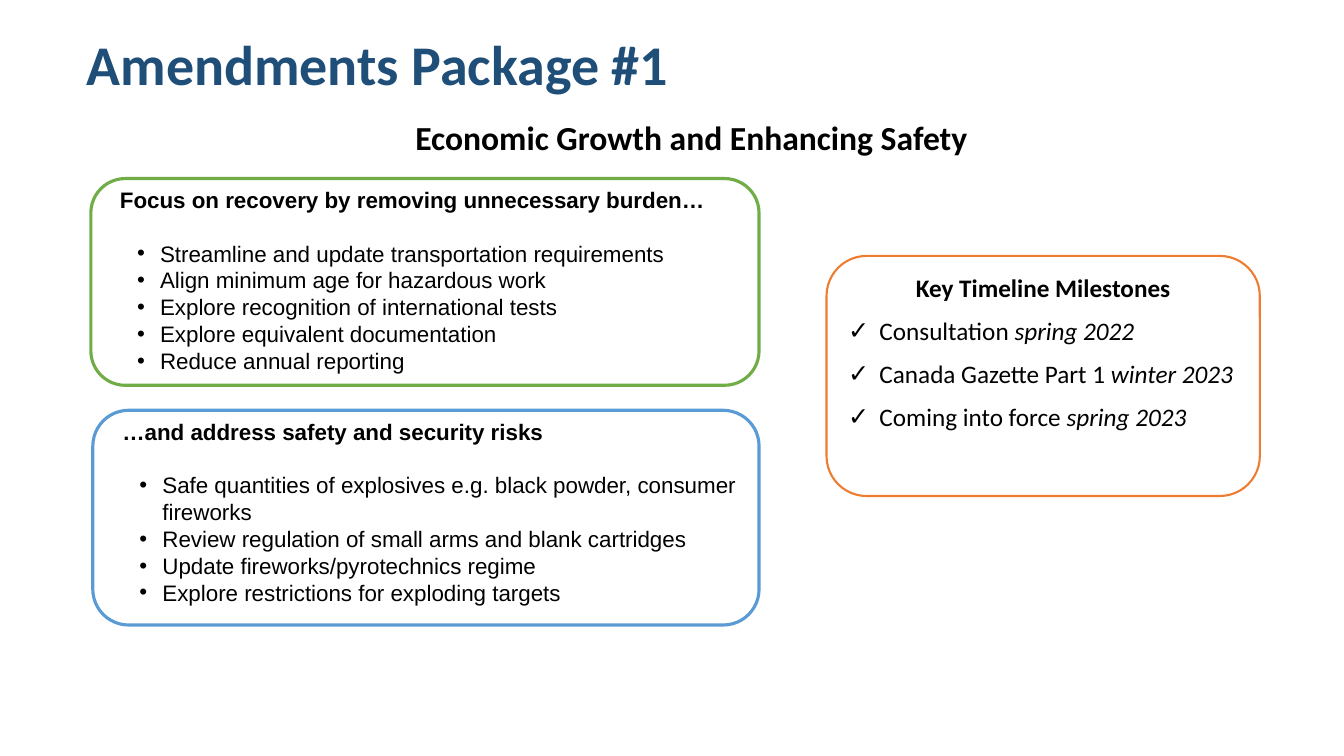
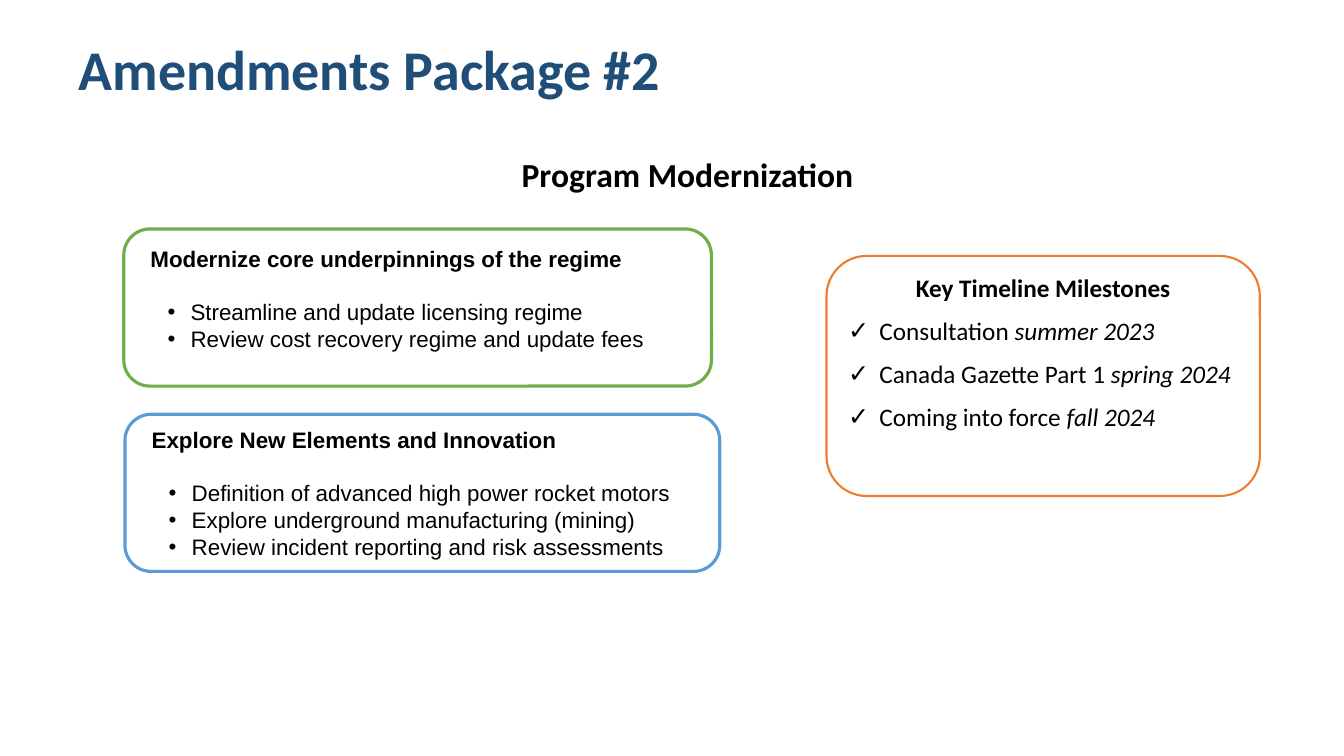
from dataclasses import dataclass

from lxml import etree
from pptx import Presentation
from pptx.dml.color import RGBColor
from pptx.enum import shapes, text
from pptx.oxml import ns
from pptx.util import Cm, Pt

NAVY = RGBColor(0x1F, 0x4E, 0x79)
BLACK = RGBColor(0x00, 0x00, 0x00)
WHITE = RGBColor(0xFF, 0xFF, 0xFF)
GREEN = RGBColor(0x70, 0xAD, 0x47)
BLUE = RGBColor(0x5B, 0x9B, 0xD5)
ORANGE = RGBColor(0xED, 0x7D, 0x31)

HEADING_FONT = "Calibri"
CARD_FONT = "Arial"
CARD_LINE = Pt(19.2)
MILESTONES = ("Consultation ", "Canada Gazette Part 1 ", "Coming into force ")


@dataclass(frozen=True)
class Area:
    """A rectangle on the page, in centimetres."""

    left: float
    top: float
    width: float
    height: float


TIMELINE_AREA = Area(20.83, 6.45, 10.92, 6.05)


@dataclass(frozen=True)
class Card:
    """An outlined card with a heading and bullets."""

    area: Area
    color: RGBColor
    heading: str
    items: tuple[str, ...]
    bottom_inset: float


@dataclass(frozen=True)
class Package:
    """The content of one amendments page."""

    title: str
    title_area: Area
    theme: str
    theme_area: Area
    theme_inset: float
    cards: tuple[Card, ...]
    dates: tuple[str, ...]


PACKAGES = (
    Package(
        "Amendments Package #1", Area(1.93, 0.91, 26.75, 1.6),
        "Economic Growth and Enhancing Safety", Area(2.34, 2.92, 29.79, 12.42), 0.13,
        (
            Card(Area(2.29, 4.5, 16.84, 5.21), GREEN,
                 "Focus on recovery by removing unnecessary burden…",
                 ("Streamline and update transportation requirements",
                  "Align minimum age for hazardous work",
                  "Explore recognition of international tests",
                  "Explore equivalent documentation",
                  "Reduce annual reporting"), 0.1),
            Card(Area(2.34, 10.34, 16.79, 5.41), BLUE,
                 "…and address safety and security risks",
                 ("Safe quantities of explosives e.g. black powder, consumer fireworks",
                  "Review regulation of small arms and blank cartridges",
                  "Update fireworks/pyrotechnics regime",
                  "Explore restrictions for exploding targets"), 0.3),
        ),
        ("spring 2022", "winter 2023", "spring 2023"),
    ),
    Package(
        "Amendments Package #2", Area(1.73, 0.81, 26.95, 2.03),
        "Program Modernization", Area(1.73, 3.33, 30.81, 11.56), 0.66,
        (
            Card(Area(3.12, 5.77, 14.81, 3.96), GREEN,
                 "Modernize core underpinnings of the regime",
                 ("Streamline and update licensing regime",
                  "Review cost recovery regime and update fees"), 0.46),
            Card(Area(3.15, 10.44, 14.99, 3.96), BLUE,
                 "Explore New Elements and Innovation",
                 ("Definition of advanced high power rocket motors",
                  "Explore underground manufacturing (mining)",
                  "Review incident reporting and risk assessments"), 0),
        ),
        ("summer 2023", "spring 2024", "fall 2024"),
    ),
)


def set_indent(para, left: float, hanging: float = 0, bullet: str = "") -> None:
    """Set the indents and the bullet of a paragraph."""
    properties = para._p.get_or_add_pPr()
    properties.set("marL", str(Cm(left)))
    properties.set("indent", str(-Cm(hanging)))
    if bullet:
        etree.SubElement(properties, ns.qn("a:buFont"), typeface=CARD_FONT)
        etree.SubElement(properties, ns.qn("a:buChar"), char=bullet)
    else:
        etree.SubElement(properties, ns.qn("a:buNone"))


def set_font(para, name: str, size: float, color: RGBColor = BLACK, bold: bool = False) -> None:
    """Set the font of a whole paragraph."""
    font = para.font
    font.name, font.size, font.bold = name, Pt(size), bold
    font.color.rgb = color


def fill_placeholder(box, area: Area, words: str, size: float, color: RGBColor,
                     align: text.PP_ALIGN, indent: float = 0):
    """Move a placeholder, write its text and return its frame."""
    box.left, box.top = Cm(area.left), Cm(area.top)
    box.width, box.height = Cm(area.width), Cm(area.height)
    frame = box.text_frame
    frame.text = words
    frame.auto_size = text.MSO_AUTO_SIZE.NONE
    para = frame.paragraphs[0]
    para.alignment, para.line_spacing, para.space_before = align, 0.9, Pt(0)
    set_indent(para, indent)
    set_font(para, HEADING_FONT, size, color, bold=True)
    return frame


def add_panel(page, area: Area, color: RGBColor, weight: float, anchor: text.MSO_ANCHOR):
    """Add a rounded outlined panel and return its text frame."""
    box = page.shapes.add_shape(
        shapes.MSO_SHAPE.ROUNDED_RECTANGLE,
        Cm(area.left), Cm(area.top), Cm(area.width), Cm(area.height))
    box.shadow.inherit = False
    box.fill.solid()
    box.fill.fore_color.rgb = WHITE
    box.line.color.rgb = color
    box.line.width = Pt(weight)
    frame = box.text_frame
    frame.word_wrap = True
    frame.vertical_anchor = anchor
    return frame


def add_card(page, card: Card) -> None:
    """Draw a card with its heading and bullets."""
    frame = add_panel(page, card.area, card.color, 2.25, text.MSO_ANCHOR.MIDDLE)
    frame.margin_top, frame.margin_bottom = 0, Cm(card.bottom_inset)
    heading = frame.paragraphs[0]
    heading.text = card.heading
    heading.space_after = CARD_LINE
    set_indent(heading, 0.23)
    for item in card.items:
        para = frame.add_paragraph()
        para.text = item
        set_indent(para, 1.24, 0.58, "•")
    for para in frame.paragraphs:
        para.alignment, para.line_spacing = text.PP_ALIGN.LEFT, CARD_LINE
        set_font(para, CARD_FONT, 16, bold=para is heading or para.text == card.heading)


def add_timeline(page, dates: tuple[str, ...]) -> None:
    """Draw the milestones panel."""
    frame = add_panel(page, TIMELINE_AREA, ORANGE, 1.5, text.MSO_ANCHOR.TOP)
    heading = frame.paragraphs[0]
    heading.text = "Key Timeline Milestones"
    heading.alignment = text.PP_ALIGN.CENTER
    set_font(heading, HEADING_FONT, 18, bold=True)
    for milestone, date in zip(MILESTONES, dates):
        para = frame.add_paragraph()
        para.alignment, para.space_before = text.PP_ALIGN.LEFT, Pt(9)
        set_indent(para, 0.79, 0.79, "✓")
        set_font(para, HEADING_FONT, 18)
        para.add_run().text = milestone
        span = para.add_run()
        span.text = date
        span.font.italic = True


def add_package(deck, package: Package) -> None:
    """Add one amendments page."""
    page = deck.slides.add_slide(deck.slide_layouts[1])
    title = fill_placeholder(page.shapes.title, package.title_area, package.title,
                             40, NAVY, text.PP_ALIGN.LEFT)
    title.vertical_anchor = text.MSO_ANCHOR.MIDDLE
    theme = fill_placeholder(page.placeholders[1], package.theme_area, package.theme,
                             24, BLACK, text.PP_ALIGN.CENTER, 0.38)
    theme.margin_top = Cm(package.theme_inset)
    for card in package.cards:
        add_card(page, card)
    add_timeline(page, package.dates)


def main() -> None:
    """Build and save the deck."""
    deck = Presentation()
    deck.slide_width, deck.slide_height = Cm(33.87), Cm(19.05)
    for package in PACKAGES:
        add_package(deck, package)
    deck.save("out.pptx")


if __name__ == "__main__":
    main()
